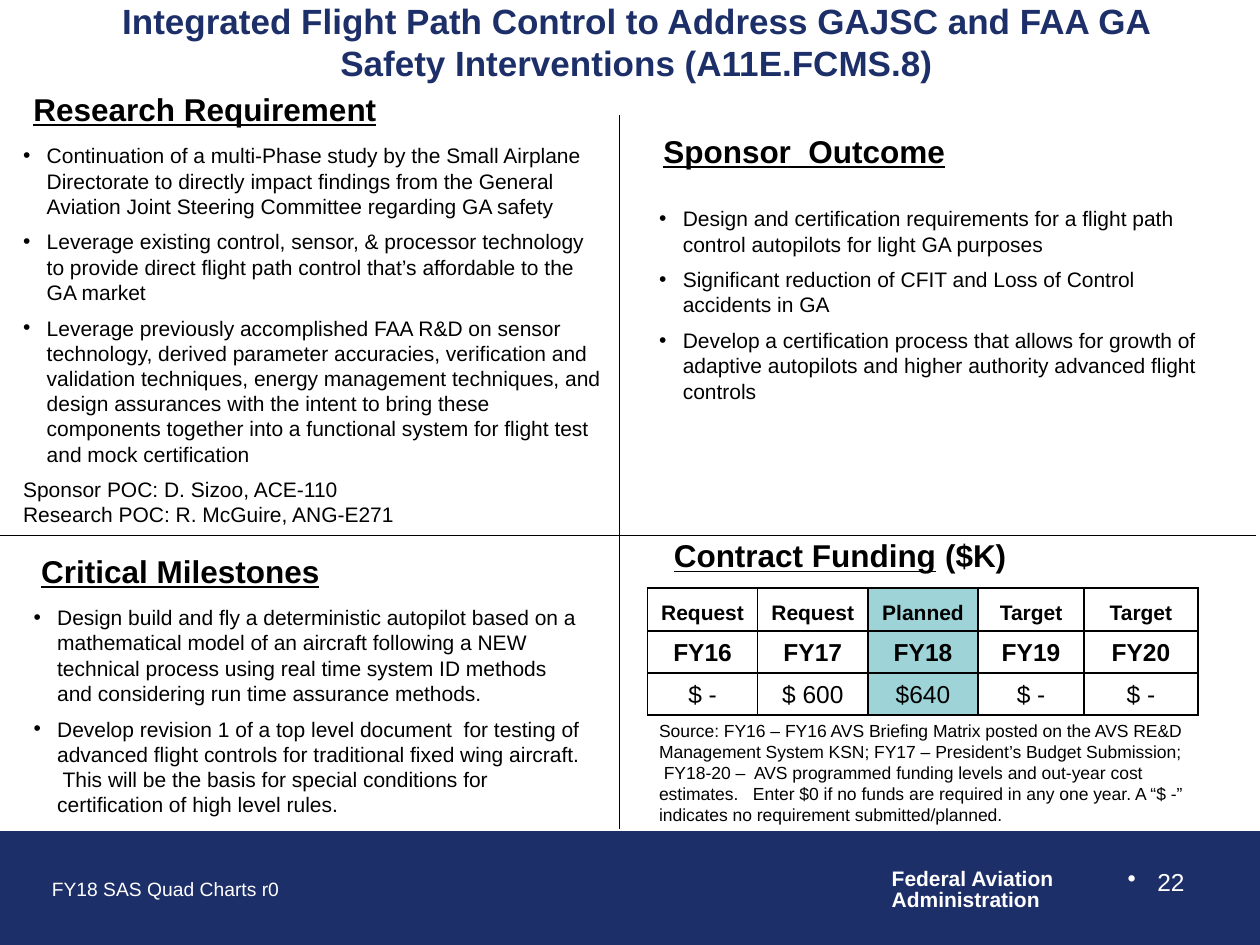
from lxml.etree import SubElement
from pptx import Presentation
from pptx.dml.color import RGBColor
from pptx.enum.shapes import MSO_CONNECTOR as Connector, MSO_SHAPE as Shape
from pptx.enum.text import MSO_ANCHOR as Anchor, MSO_AUTO_SIZE as AutoSize, PP_ALIGN as Align
from pptx.oxml.ns import qn
from pptx.util import Pt

NAVY = RGBColor(0x1D, 0x2F, 0x68)
TEAL = RGBColor(0x9E, 0xD3, 0xD7)
BLACK = RGBColor(0, 0, 0)
WHITE = RGBColor(255, 255, 255)
FONT = "Arial"

# Content; places are left, top, width, height in points
TITLE = "Integrated Flight Path Control to Address GAJSC and FAA GA Safety Interventions (A11E.FCMS.8)"
HEADINGS = [
    ("Research Requirement", "", (12, 48, 360, 24)),
    ("Sponsor  Outcome", "", (372, 72, 336, 24)),
    ("Critical Milestones", "", (16.5, 312, 324, 27)),
    ("Contract Funding", " ($K)", (378, 303, 318, 39)),
]
RESEARCH = [
    "Continuation of a multi-Phase study by the Small Airplane Directorate to directly impact "
    "findings from the General Aviation Joint Steering Committee regarding GA safety",
    "Leverage existing control, sensor, & processor technology to provide direct flight path "
    "control that’s affordable to the GA market",
    "Leverage previously accomplished FAA R&D on sensor technology, derived parameter accuracies, "
    "verification and validation techniques, energy management techniques, and design assurances "
    "with the intent to bring these components together into a functional system for flight test "
    "and mock certification",
]
CONTACTS = ["Sponsor POC: D. Sizoo, ACE-110", "Research POC: R. McGuire, ANG-E271"]
OUTCOMES = [
    "Design and certification requirements for a flight path control autopilots for light GA purposes",
    "Significant reduction of CFIT and Loss of Control accidents in GA",
    "Develop a certification process that allows for growth of adaptive autopilots and higher "
    "authority advanced flight controls",
]
MILESTONES = [
    "Design build and fly a deterministic autopilot based on a mathematical model of an aircraft "
    "following a NEW technical process using real time system ID methods and considering run time "
    "assurance methods.",
    "Develop revision 1 of a top level document  for testing of advanced flight controls for "
    "traditional fixed wing aircraft.  This will be the basis for special conditions for "
    "certification of high level rules.",
]
# Placeholder index, bullets, plain closing lines, place
LISTS = [
    (2, RESEARCH, CONTACTS, (6, 78, 348, 253)),
    (4, OUTCOMES, [], (369.5, 114, 326, 124)),
    (1, MILESTONES, [], (12, 342, 328, 131)),
]
FUNDING = [
    ["Request", "Request", "Planned", "Target", "Target"],
    ["FY16", "FY17", "FY18", "FY19", "FY20"],
    ["$ -", "$ 600", "$640", "$ -", "$ -"],
]
COLUMN_WIDTHS = [63, 63, 63, 60.5, 65]
ROW_HEIGHTS = [24.5, 24, 24]
ROW_STYLES = [(12, True), (14, True), (14, False)]
PLANNED_COLUMN = 2
SOURCE = (
    "Source: FY16 – FY16 AVS Briefing Matrix posted on the AVS RE&D Management System KSN; "
    "FY17 – President’s Budget Submission;  FY18-20 –  AVS programmed funding levels and out-year "
    "cost estimates.   Enter $0 if no funds are required in any one year. A “$ -” indicates no "
    "requirement submitted/planned."
)
DIVIDERS = [(354, 66, 354, 474), (0, 306, 718, 306)]


def place(shape, left, top, width, height):
    shape.left, shape.top, shape.width, shape.height = map(Pt, (left, top, width, height))


def style(para, size, color=BLACK, bold=False):
    for span in para.runs:
        span.font.name, span.font.size, span.font.bold = FONT, Pt(size), bold
        span.font.color.rgb = color


def set_bullet(para, indent=0):
    """Hang a bullet by indent points, or turn the bullet off at zero."""
    props = para._p.get_or_add_pPr()
    props.set("marL", str(Pt(indent)))
    props.set("indent", str(-Pt(indent)))
    if indent:
        SubElement(props, qn("a:buChar")).set("char", "•")
    else:
        SubElement(props, qn("a:buNone"))


def add_text(page, text, area, size, color=BLACK, bold=False, wrap=True):
    box = page.shapes.add_textbox(*map(Pt, area))
    box.text_frame.word_wrap = wrap
    box.text_frame.text = text
    for para in box.text_frame.paragraphs:
        style(para, size, color, bold)
    return box.text_frame


def fill_list(box, bullets, closing, area):
    place(box, *area)
    frame = box.text_frame
    frame.text = "\n".join(bullets + closing)
    frame.vertical_anchor, frame.auto_size = Anchor.TOP, AutoSize.NONE
    for i, para in enumerate(frame.paragraphs):
        set_bullet(para, 13.5 if i < len(bullets) else 0)
        para.space_before = Pt(6 if 0 < i <= len(bullets) else 0)
        style(para, 12)


def add_borders(cell):
    props = cell._tc.get_or_add_tcPr()
    for side in ("lnL", "lnR", "lnT", "lnB"):
        edge = SubElement(props, qn(f"a:{side}"), w=str(Pt(1)))
        SubElement(SubElement(edge, qn("a:solidFill")), qn("a:srgbClr"), val=str(BLACK))


def add_funding_table(page):
    frame = page.shapes.add_table(
        len(FUNDING), len(COLUMN_WIDTHS), Pt(370), Pt(336),
        Pt(sum(COLUMN_WIDTHS)), Pt(sum(ROW_HEIGHTS)))
    table = frame.table
    table.first_row = table.horz_banding = False
    for column, width in zip(table.columns, COLUMN_WIDTHS):
        column.width = Pt(width)
    for r, (values, height, (size, bold)) in enumerate(zip(FUNDING, ROW_HEIGHTS, ROW_STYLES)):
        table.rows[r].height = Pt(height)
        for c, value in enumerate(values):
            cell = table.cell(r, c)
            add_borders(cell)
            cell.fill.solid()
            cell.fill.fore_color.rgb = TEAL if c == PLANNED_COLUMN else WHITE
            cell.vertical_anchor = Anchor.BOTTOM
            cell.text = value
            para = cell.text_frame.paragraphs[0]
            para.alignment = Align.CENTER
            style(para, size, BLACK, bold)


def main():
    deck = Presentation()
    deck.slide_width, deck.slide_height = Pt(720), Pt(540)
    page = deck.slides.add_slide(deck.slide_layouts.get_by_name("Comparison"))

    # Footer band
    band = page.shapes.add_shape(Shape.RECTANGLE, Pt(0), Pt(475), Pt(720), Pt(65))
    band.shadow.inherit = False
    band.fill.solid()
    band.fill.fore_color.rgb = band.line.color.rgb = NAVY
    band.line.width = Pt(0.75)
    agency = add_text(page, "Federal Aviation\nAdministration", (502.5, 493, 108, 32),
                      12, WHITE, True, wrap=False)
    for para in agency.paragraphs:
        para.line_spacing = 0.85
    add_text(page, "FY18 SAS Quad Charts r0", (22.5, 498, 145, 21), 11, WHITE, wrap=False)
    number = add_text(page, "22", (516, 492, 168, 37), 14, WHITE).paragraphs[0]
    number.alignment = Align.RIGHT
    set_bullet(number, 17)

    # Title
    title = page.shapes.title
    place(title, 30, -6, 667.5, 60)
    title.text_frame.text = TITLE
    title.text_frame.vertical_anchor = Anchor.MIDDLE
    title.text_frame.auto_size = AutoSize.NONE
    title.text_frame.paragraphs[0].alignment = Align.CENTER
    style(title.text_frame.paragraphs[0], 20, NAVY, True)

    # Quadrant headings and dividers
    for heading, suffix, area in HEADINGS:
        para = add_text(page, heading, area, 18).paragraphs[0]
        para.runs[0].font.underline = True
        if suffix:
            para.add_run().text = suffix
        style(para, 18, BLACK, True)
    for ends in DIVIDERS:
        divider = page.shapes.add_connector(Connector.STRAIGHT, *map(Pt, ends))
        divider.line.color.rgb = BLACK
        divider.line.width = Pt(0.75)
        SubElement(divider._element.spPr, qn("a:effectLst"))

    # Quadrant lists
    bodies = {box.placeholder_format.idx: box for box in page.placeholders}
    for index, bullets, closing, area in LISTS:
        fill_list(bodies[index], bullets, closing, area)
    unused = bodies[3]._element
    unused.getparent().remove(unused)

    # Funding table and its source
    add_funding_table(page)
    add_text(page, SOURCE, (369.5, 408, 315, 66), 10)

    deck.save("out.pptx")


if __name__ == "__main__":
    main()
